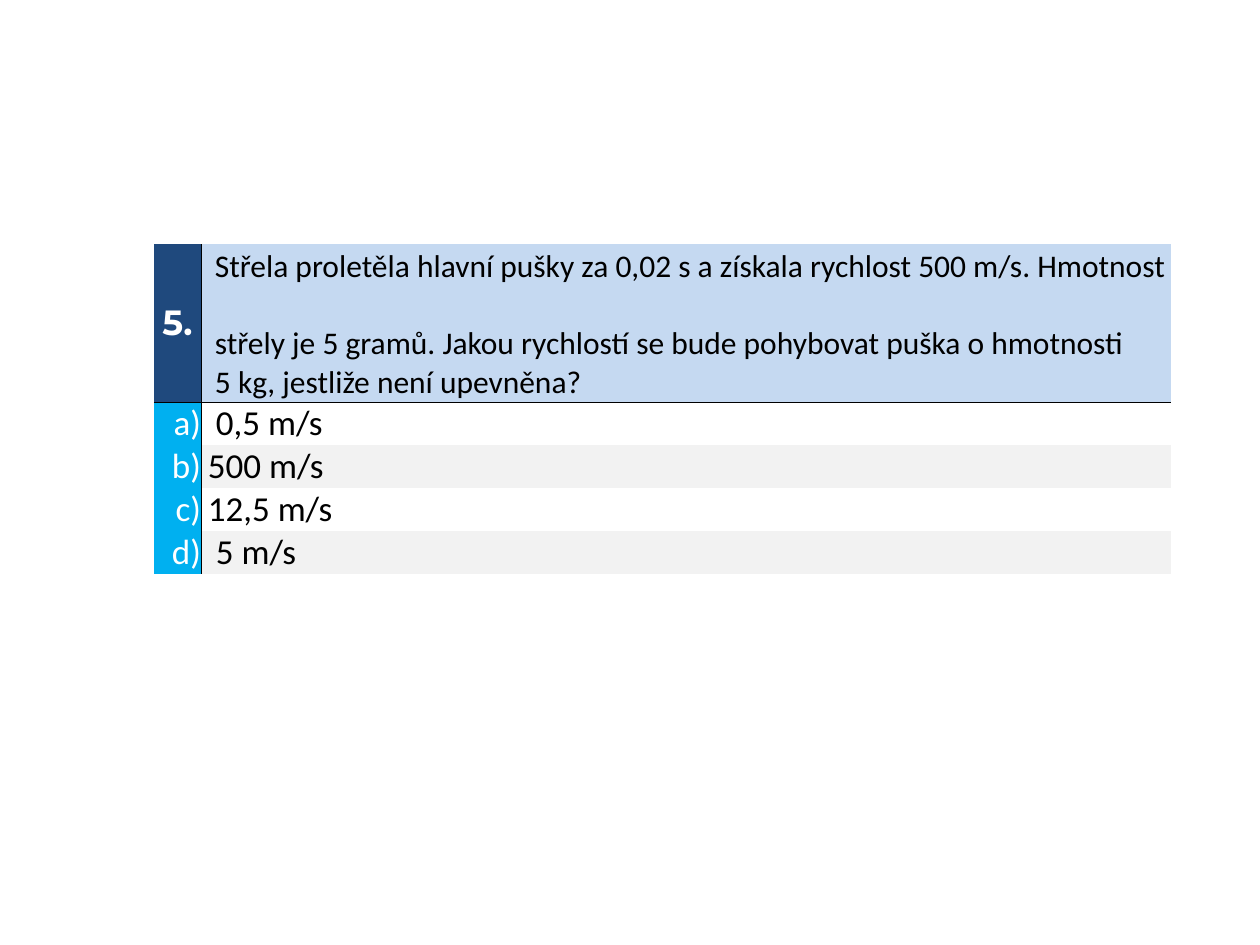
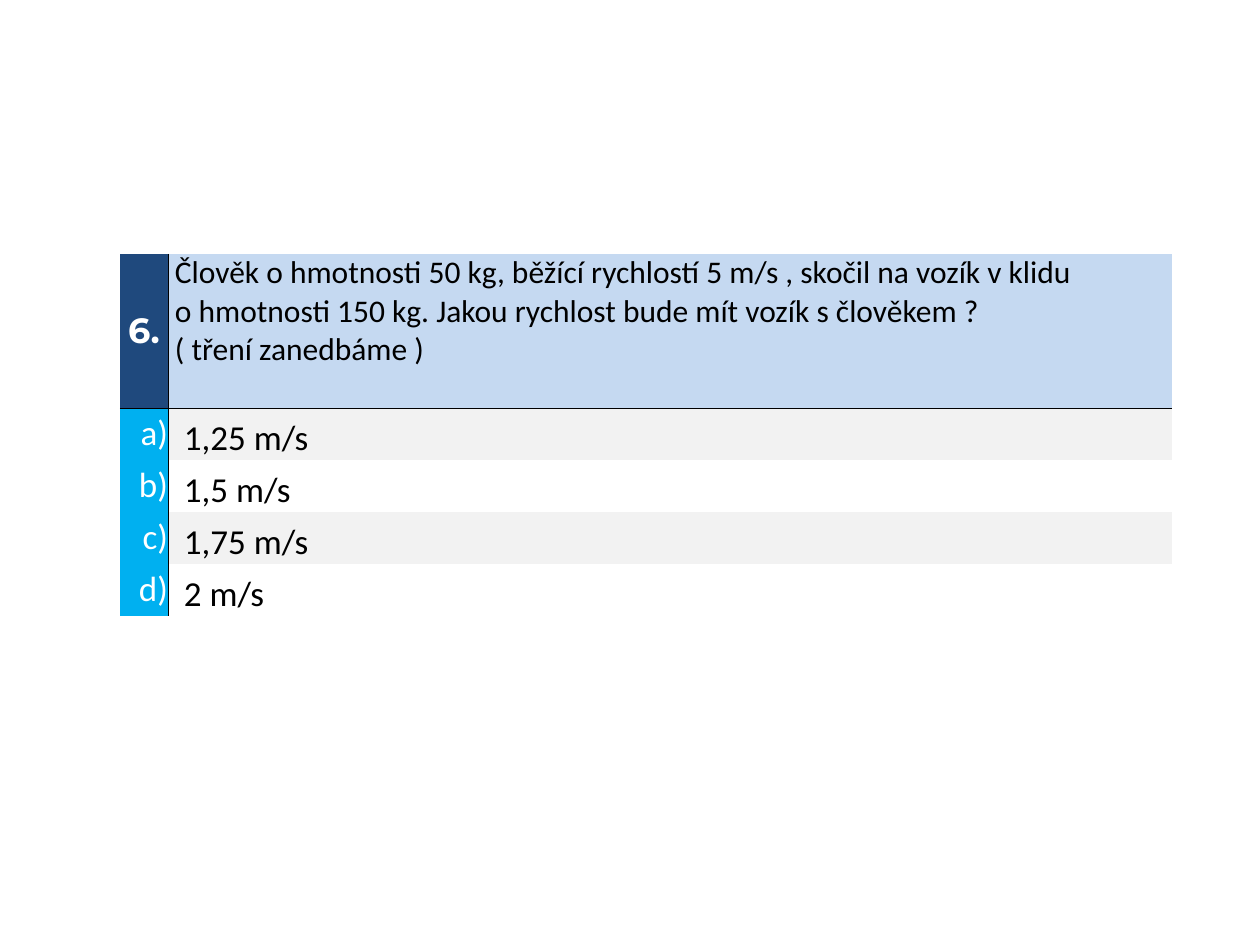
"""Build two physics quiz slides, each a question table with four answers."""
from pptx import Presentation
from pptx.dml.color import RGBColor
from pptx.enum.text import MSO_ANCHOR as ANCHOR, PP_ALIGN as ALIGN
from pptx.oxml.ns import qn
from pptx.util import Pt
from lxml.etree import SubElement

PX = 914400 // 126
COLORS = {
    "number": "1F497D", "question": "C5D9F1", "label": "00B0F0",
    "band": "F2F2F2", "white": "FFFFFF", "black": "000000",
}
LABELS = ["a)", "b)", "c)", "d)"]
QUIZ = [
    {
        "number": "5.",
        "question": [
            "Střela proletěla hlavní pušky za 0,02 s a získala rychlost 500 m/s. Hmotnost",
            "střely je 5 gramů. Jakou rychlostí se bude pohybovat puška o hmotnosti\n"
            "5 kg, jestliže není upevněna?",
        ],
        "answers": [("0,5 m/s", 15), ("500 m/s", 7), ("12,5 m/s", 7), ("5 m/s", 15)],
        "at": (154, 244), "cols": (47, 970), "rows": (158, 43),
        "indent": 14, "top": 4, "first_band": 1,
    },
    {
        "number": "6.",
        "question": [
            "Člověk o hmotnosti 50 kg, běžící rychlostí 5 m/s , skočil na vozík v klidu\n"
            "o hmotnosti 150 kg. Jakou rychlost bude mít vozík s člověkem ?\n"
            "( tření zanedbáme )",
        ],
        "answers": [("1,25 m/s", 16), ("1,5 m/s", 16), ("1,75 m/s", 16), ("2 m/s", 16)],
        "at": (120, 254), "cols": (48, 1004), "rows": (154, 52),
        "indent": 7, "top": 0, "first_band": 0,
    },
]


def set_borders(cell, sides):
    """Draw thin black lines on the named sides and clear the others."""
    tc_pr = cell._tc.get_or_add_tcPr()
    for side in "LRTB":
        ln = SubElement(tc_pr, qn(f"a:ln{side}"), w=str(Pt(0.5)))
        if side in sides:
            fill = SubElement(ln, qn("a:solidFill"))
            SubElement(fill, qn("a:srgbClr"), val=COLORS["black"])
        else:
            SubElement(ln, qn("a:noFill"))


def write_cell(cell, *texts, size=20, font="Calibri", color="black", bold=False,
               align=ALIGN.LEFT, anchor=ANCHOR.MIDDLE, left=0, top=0,
               fill=None, borders=""):
    """Fill a cell with one paragraph per text."""
    set_borders(cell, borders)
    if fill:
        cell.fill.solid()
        cell.fill.fore_color.rgb = RGBColor.from_string(COLORS[fill])
    else:
        cell.fill.background()
    cell.margin_left, cell.margin_top = left * PX, top * PX
    cell.margin_right = cell.margin_bottom = 0
    cell.vertical_anchor = anchor
    tf = cell.text_frame
    for i, text in enumerate(texts):
        p = tf.add_paragraph() if i else tf.paragraphs[0]
        p.text = text
        p.alignment = align
        if i:
            p.space_before = Pt(22)
        for r in p.runs:
            r.font.size, r.font.name, r.font.bold = Pt(size), font, bold
            r.font.color.rgb = RGBColor.from_string(COLORS[color])


def add_quiz(prs, quiz):
    """Add a slide with one question table."""
    s = prs.slides.add_slide(prs.slide_layouts[6])
    head, row = quiz["rows"]
    heights = [head] + [row] * len(LABELS)
    x, y = quiz["at"]
    table = s.shapes.add_table(len(heights), 2, x * PX, y * PX,
                               sum(quiz["cols"]) * PX, sum(heights) * PX).table
    table.first_row = table.horz_banding = False
    for col, width in zip(table.columns, quiz["cols"]):
        col.width = width * PX
    for line, height in zip(table.rows, heights):
        line.height = height * PX

    write_cell(table.cell(0, 0), quiz["number"], font="Montserrat", color="white",
               bold=True, align=ALIGN.CENTER, fill="number", borders="RB")
    write_cell(table.cell(0, 1), *quiz["question"], size=18, anchor=ANCHOR.TOP,
               left=quiz["indent"], top=quiz["top"], fill="question", borders="LB")
    for i, (label, (answer, indent)) in enumerate(zip(LABELS, quiz["answers"])):
        edge = "" if i else "T"
        band = "band" if i % 2 == quiz["first_band"] else None
        write_cell(table.cell(i + 1, 0), label, color="white", align=ALIGN.RIGHT,
                   fill="label", borders="R" + edge)
        write_cell(table.cell(i + 1, 1), answer, anchor=ANCHOR.BOTTOM,
                   left=indent, fill=band, borders="L" + edge)


def main():
    """Build and save the presentation."""
    prs = Presentation()
    prs.slide_width, prs.slide_height = 1260 * PX, 945 * PX
    for quiz in QUIZ:
        add_quiz(prs, quiz)
    prs.save("out.pptx")


if __name__ == "__main__":
    main()
